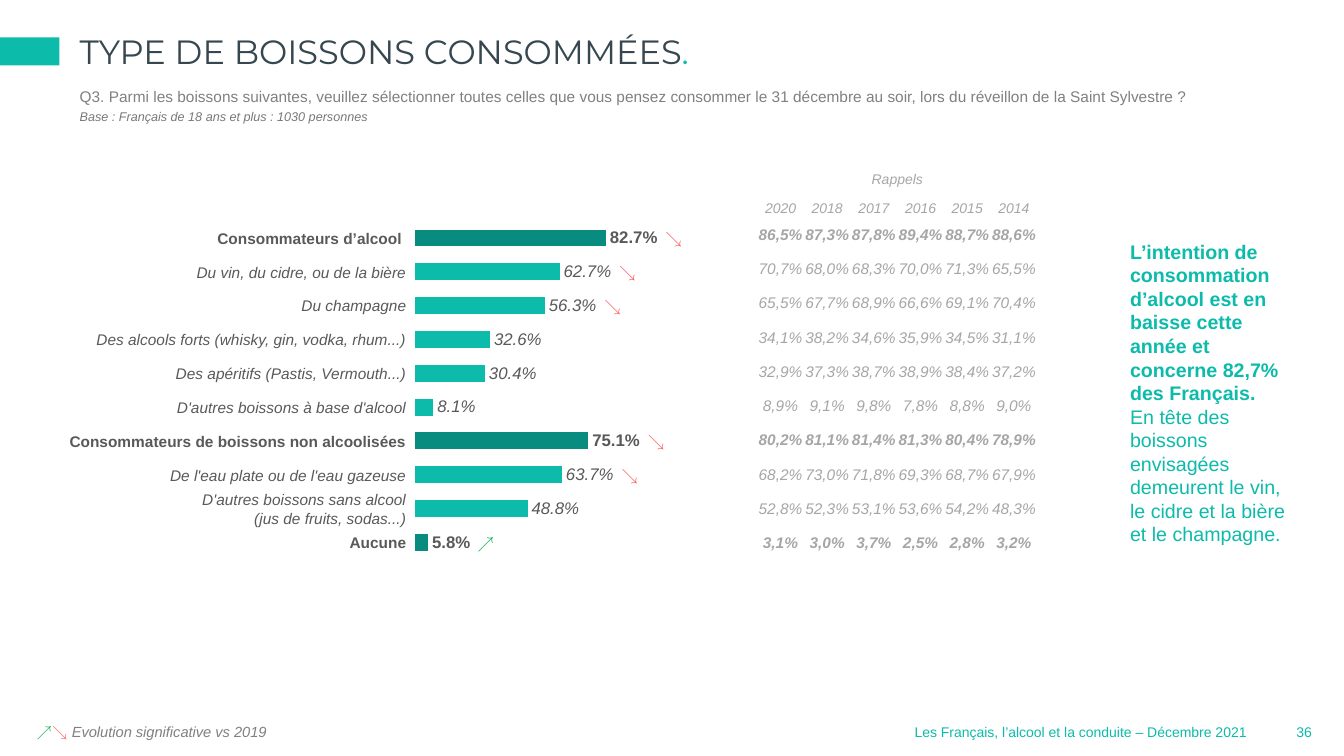
from lxml.etree import SubElement
from pptx import Presentation
from pptx.chart.data import CategoryChartData
from pptx.dml.color import RGBColor
from pptx.enum.chart import XL_CHART_TYPE, XL_LABEL_POSITION
from pptx.enum.shapes import MSO_SHAPE
from pptx.enum.text import MSO_ANCHOR, MSO_AUTO_SIZE, PP_ALIGN
from pptx.oxml import parse_xml
from pptx.oxml.ns import nsdecls, qn
from pptx.util import Inches, Pt

COLORS = {
    "teal": "0CBBAA", "dark_teal": "098C80", "slate": "37474F",
    "question": "808080", "base": "77787B", "label": "595959",
    "history": "A6A6A6", "down": "FF5859", "up": "00B050",
}
PERCENT = '0.0"%"'
NO_STYLE = "{2D5ABB26-0587-4C30-8999-92F81FD0307C}"
YEARS = "2020 2018 2017 2016 2015 2014"
DRINKS = [
    ("Consommateurs d’alcool ", 82.7, "down", True,
     "86,5% 87,3% 87,8% 89,4% 88,7% 88,6%"),
    ("Du vin, du cidre, ou de la bière", 62.7, "down", False,
     "70,7% 68,0% 68,3% 70,0% 71,3% 65,5%"),
    ("Du champagne", 56.3, "down", False,
     "65,5% 67,7% 68,9% 66,6% 69,1% 70,4%"),
    ("Des alcools forts (whisky, gin, vodka, rhum...)", 32.6, None, False,
     "34,1% 38,2% 34,6% 35,9% 34,5% 31,1%"),
    ("Des apéritifs (Pastis, Vermouth...)", 30.4, None, False,
     "32,9% 37,3% 38,7% 38,9% 38,4% 37,2%"),
    ("D'autres boissons à base d'alcool", 8.1, None, False,
     "8,9% 9,1% 9,8% 7,8% 8,8% 9,0%"),
    ("Consommateurs de boissons non alcoolisées", 75.1, "down", True,
     "80,2% 81,1% 81,4% 81,3% 80,4% 78,9%"),
    ("De l'eau plate ou de l'eau gazeuse", 63.7, "down", False,
     "68,2% 73,0% 71,8% 69,3% 68,7% 67,9%"),
    ("D'autres boissons sans alcool\n(jus de fruits, sodas...)", 48.8, None, False,
     "52,8% 52,3% 53,1% 53,6% 54,2% 48,3%"),
    ("Aucune", 5.8, "up", True,
     "3,1% 3,0% 3,7% 2,5% 2,8% 3,2%"),
]
ARROWS = {"down": "↘", "up": "↗"}
PLOT = {"x": 0.053, "y": 0.047, "w": 0.797, "h": 0.907}


def style_font(font, size=11, color="label", bold=False, italic=False, name="Arial"):
    font.size, font.bold, font.italic, font.name = Pt(size), bold, italic, name
    font.color.rgb = RGBColor.from_string(COLORS[color])


def write(para, text, align=PP_ALIGN.LEFT, **style):
    para.alignment = align
    span = para.add_run()
    span.text = text
    style_font(span.font, **style)


def place(shape, box):
    shape.left, shape.top, shape.width, shape.height = map(Inches, box)


def clear_insets(frame, anchor):
    frame.margin_left = frame.margin_right = frame.margin_top = frame.margin_bottom = 0
    frame.auto_size = MSO_AUTO_SIZE.NONE
    frame.vertical_anchor = anchor


def add_text(page, box, text, **style):
    frame = page.shapes.add_textbox(*map(Inches, box)).text_frame
    frame.word_wrap = True
    for index, line in enumerate(text.split("\n")):
        para = frame.add_paragraph() if index else frame.paragraphs[0]
        write(para, line, **style)
    return frame


def add_heading(page, box):
    left, top, width, height = box
    title, body = page.placeholders[0], page.placeholders[1]
    place(title, box)
    clear_insets(title.text_frame, MSO_ANCHOR.TOP)
    para = title.text_frame.paragraphs[0]
    write(para, "TYPE DE BOISSONS CONSOMMÉES", size=24, color="slate", name="Montserrat")
    write(para, ".", size=24, color="teal", name="Montserrat")

    place(body, (left, top + 0.55, width, 0.42))
    clear_insets(body.text_frame, MSO_ANCHOR.TOP)
    question = body.text_frame.paragraphs[0]
    base = body.text_frame.add_paragraph()
    base.level = 1
    for para in (question, base):
        properties = para._p.get_or_add_pPr()
        properties.set("marL", "0")
        properties.set("indent", "0")
        SubElement(properties, qn("a:buNone"))
        para.space_before, para.space_after = Pt(0), Pt(3)
    write(question, "Q3. Parmi les boissons suivantes, veuillez sélectionner toutes celles "
          "que vous pensez consommer le 31 décembre au soir, lors du réveillon de la "
          "Saint Sylvestre ?", color="question")
    write(base, "Base : Français de 18 ans et plus : 1030 personnes",
          size=9, color="base", italic=True)

    accent = page.shapes.add_shape(
        MSO_SHAPE.RECTANGLE, *map(Inches, (0, top + 0.06, 0.59, 0.28)))
    accent.shadow.inherit = False
    accent.fill.solid()
    accent.fill.fore_color.rgb = RGBColor.from_string(COLORS["teal"])
    accent.line.fill.background()


def add_drink_chart(page, box):
    data = CategoryChartData(number_format="0.0")
    data.categories = [str(number) for number in range(1, len(DRINKS) + 1)]
    data.add_series("Series 1", [value for _, value, *_ in DRINKS])
    chart = page.shapes.add_chart(
        XL_CHART_TYPE.BAR_CLUSTERED, *map(Inches, box), data).chart
    chart.has_legend = chart.has_title = False
    style_font(chart.font, size=12)
    chart.category_axis.reverse_order = True
    chart.category_axis.visible = chart.value_axis.visible = False
    chart.value_axis.has_major_gridlines = False
    chart.value_axis.minimum_scale, chart.value_axis.maximum_scale = 0, 100

    area = chart.element.find(".//" + qn("c:plotArea"))
    old_layout = area.find(qn("c:layout"))
    if old_layout is not None:
        area.remove(old_layout)
    sizes = "".join(f'<c:{key} val="{value}"/>' for key, value in PLOT.items())
    area.insert(0, parse_xml(
        f'<c:layout {nsdecls("c")}><c:manualLayout><c:layoutTarget val="inner"/>'
        f'<c:xMode val="edge"/><c:yMode val="edge"/>{sizes}</c:manualLayout></c:layout>'))

    plot = chart.plots[0]
    plot.gap_width, plot.vary_by_categories = 100, False
    series = plot.series[0]
    series.format.fill.solid()
    series.format.fill.fore_color.rgb = RGBColor.from_string(COLORS["teal"])
    labels = series.data_labels
    labels.show_value = True
    labels.number_format, labels.number_format_is_linked = PERCENT, False
    labels.position = XL_LABEL_POSITION.OUTSIDE_END
    style_font(labels.font, size=12, italic=True)
    for index, (_, _, _, is_group, _) in enumerate(DRINKS):
        if is_group:
            point = series.points[index]
            point.format.fill.solid()
            point.format.fill.fore_color.rgb = RGBColor.from_string(COLORS["dark_teal"])
            style_font(point.data_label.font, size=12, bold=True)
            point.data_label.position = XL_LABEL_POSITION.OUTSIDE_END
    for label in chart.element.iter(qn("c:dLbl")):
        label.insert(1, parse_xml(
            f"<c:numFmt {nsdecls('c')} formatCode='{PERCENT}' sourceLinked='0'/>"))


def add_drink_labels(page, box):
    left, top, width, height = box
    plot_left = left + PLOT["x"] * width
    plot_top = top + PLOT["y"] * height
    pitch = PLOT["h"] * height / len(DRINKS)
    for index, (name, value, trend, is_group, _) in enumerate(DRINKS):
        middle = plot_top + (index + 0.5) * pitch
        frame = add_text(page, (0.5, middle - 0.19, 3.53, 0.38), name,
                         align=PP_ALIGN.RIGHT, bold=is_group, italic=not is_group)
        clear_insets(frame, MSO_ANCHOR.MIDDLE)
        if trend:
            bar_end = plot_left + PLOT["w"] * width * value / 100
            gap = 0.49 if value >= 10 else 0.39
            add_text(page, (bar_end + gap, middle - 0.15, 0.41, 0.3),
                     ARROWS[trend], size=12, color=trend)


def add_history_table(page, box):
    rows = [("Rappels", 10, False, 0.41), (YEARS, 10, False, 0.16)]
    rows += [(history, 11, is_group, 0.34) for *_, is_group, history in DRINKS]
    years = len(YEARS.split())
    frame = page.shapes.add_table(len(rows), years, *map(Inches, box))
    frame.element.find(".//" + qn("a:tableStyleId")).text = NO_STYLE
    table = frame.table
    table.first_row = table.horz_banding = False
    for column in table.columns:
        column.width = Inches(box[2] / years)
    table.cell(0, 0).merge(table.cell(0, years - 1))
    for row, (texts, size, bold, height) in zip(table.rows, rows):
        row.height = Inches(height)
        for cell in row.cells:
            cell.fill.background()
            cell.vertical_anchor = MSO_ANCHOR.MIDDLE
            cell.margin_left = cell.margin_right = cell.margin_top = Inches(0.01)
            cell.margin_bottom = 0
        for cell, text in zip(row.cells, texts.split()):
            write(cell.text_frame.paragraphs[0], text, align=PP_ALIGN.CENTER,
                  size=size, color="history", bold=bold, italic=True)


def add_comment(page, box):
    frame = add_text(page, box, "L’intention de consommation d’alcool est en baisse cette "
                     "année et concerne 82,7% des Français.", size=14, color="teal", bold=True)
    write(frame.add_paragraph(), "En tête des boissons envisagées demeurent le vin, "
          "le cidre et la bière et le champagne.", size=14, color="teal")


def add_footer(page, box):
    left, top, width, height = box
    legend = add_text(page, (left, top, 2.79, height), ARROWS["up"],
                      align=PP_ALIGN.CENTER, color="up")
    para = legend.paragraphs[0]
    write(para, ARROWS["down"] + " ", align=PP_ALIGN.CENTER, color="down")
    write(para, "Evolution significative vs 2019", align=PP_ALIGN.CENTER,
          size=10.5, color="question", italic=True)
    right = left + width
    add_text(page, (right - 4.7, top + 0.02, 4, height),
             "Les Français, l’alcool et la conduite – Décembre 2021",
             align=PP_ALIGN.RIGHT, size=10, color="teal")
    add_text(page, (right - 0.45, top + 0.02, 0.45, height), "36",
             align=PP_ALIGN.CENTER, size=10, color="teal")


def main():
    deck = Presentation()
    deck.slide_width, deck.slide_height = Inches(13.33), Inches(7.5)
    page = deck.slides.add_slide(deck.slide_layouts[1])
    chart_box = (3.96, 2.02, 2.88, 3.7)
    add_heading(page, (0.79, 0.31, 11.81, 0.47))
    add_comment(page, (11.11, 2.33, 1.75, 3.16))
    add_drink_chart(page, chart_box)
    add_drink_labels(page, chart_box)
    add_history_table(page, (7.51, 1.57, 2.78, 3.97))
    add_footer(page, (0.11, 7.11, 13.05, 0.29))
    deck.save("out.pptx")


if __name__ == "__main__":
    main()
